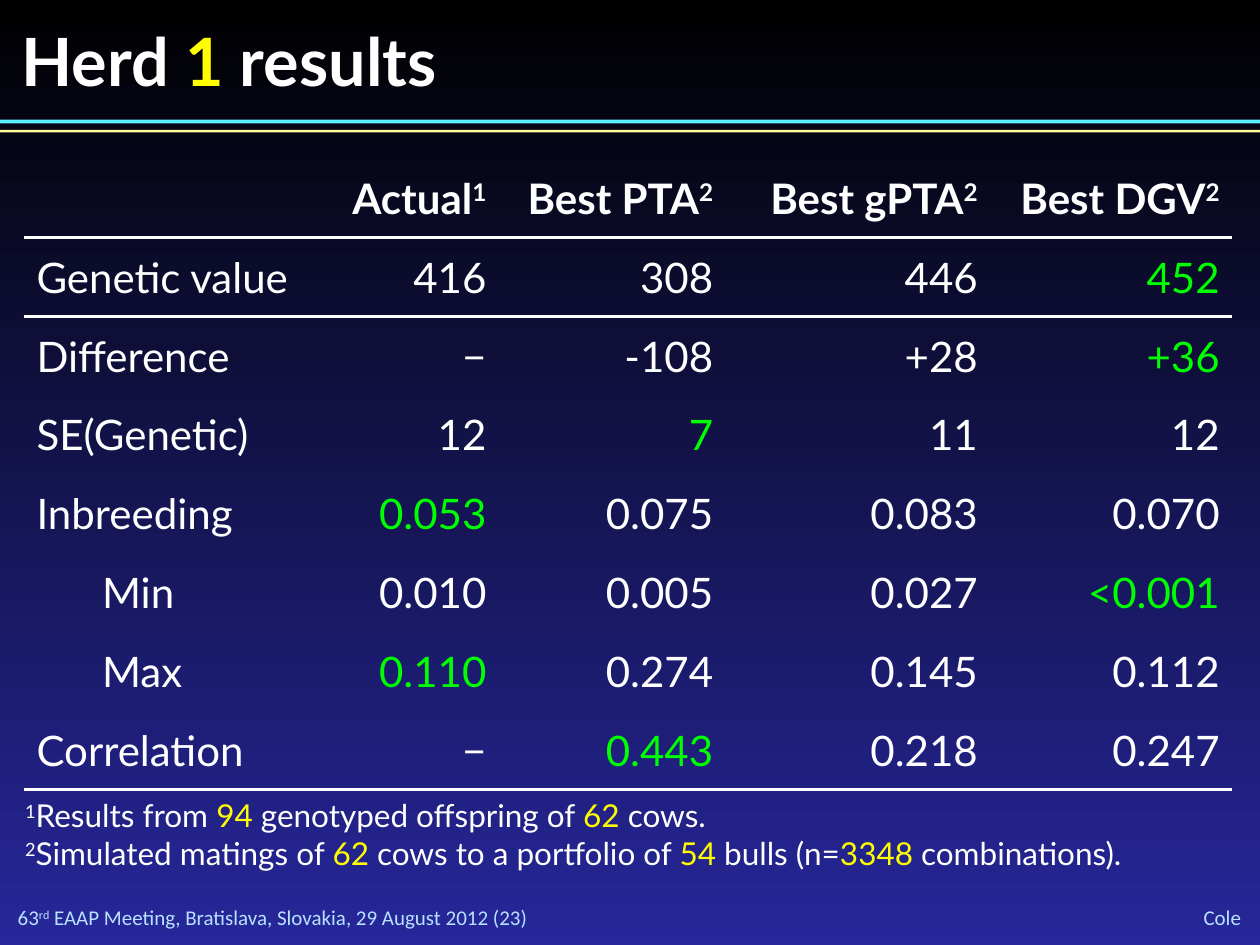
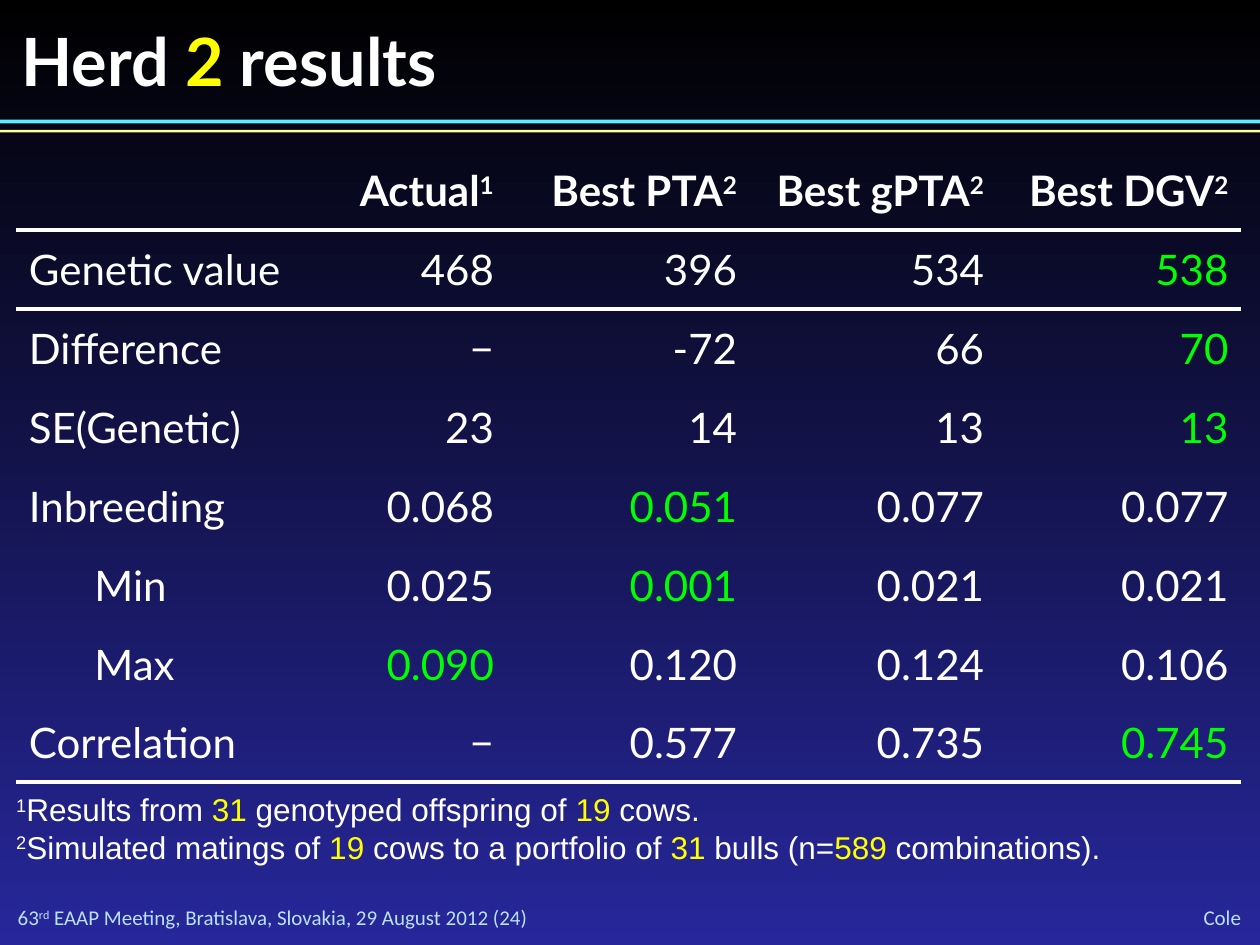
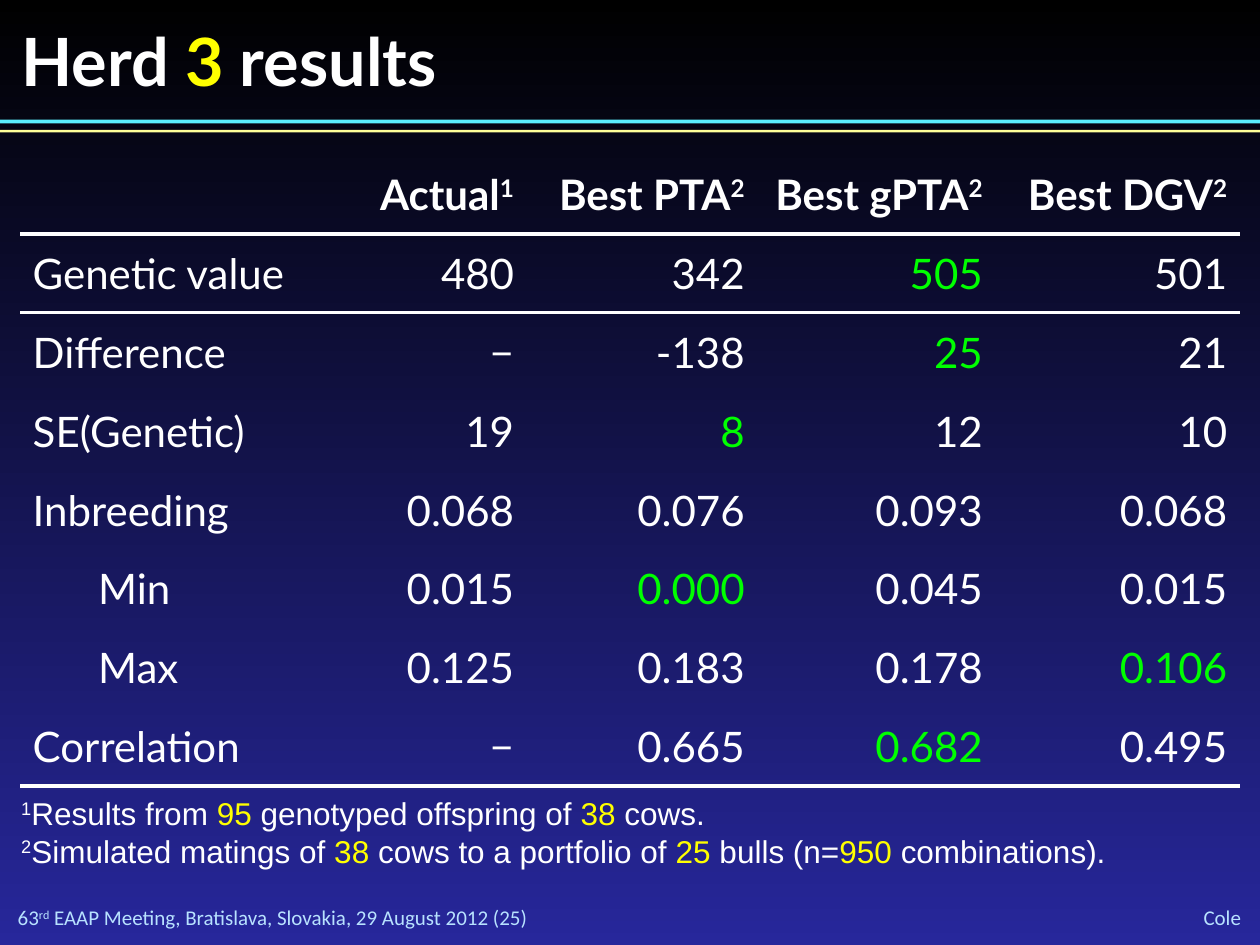
from dataclasses import dataclass
from typing import NamedTuple, Optional

import pptx
import pptx.dml.color
import pptx.enum.shapes
import pptx.enum.text
import pptx.oxml
import pptx.oxml.ns
import pptx.slide
import pptx.table
import pptx.text.text
import pptx.util
from lxml import etree

RGBColor = pptx.dml.color.RGBColor
Align = pptx.enum.text.PP_ALIGN
Anchor = pptx.enum.text.MSO_ANCHOR
qn = pptx.oxml.ns.qn

BLACK = RGBColor(0x00, 0x00, 0x00)
NAVY = RGBColor(0x27, 0x27, 0x9B)
WHITE = RGBColor(0xFF, 0xFF, 0xFF)
YELLOW = RGBColor(0xFF, 0xFF, 0x00)
GREEN = RGBColor(0x00, 0xFF, 0x00)
CYAN = RGBColor(0x5B, 0xEF, 0xFF)
CREAM = RGBColor(0xFF, 0xFF, 0x99)
PALE_BLUE = RGBColor(0xB8, 0xE2, 0xFF)

EMU_PER_PX = 9144  # 100 px to the inch
RULE_WIDTH = pptx.util.Pt(2.25)
PLAIN_TABLE_STYLE = "{2D5ABB26-0587-4C30-8999-92F81FD0307C}"
TABLE_HEIGHT = 501
SUB_ROW_MARGIN = 62
FIRST_PAGE_NUMBER = 23

ROW_LABELS = ("Genetic value", "Difference", "SE(Genetic)", "Inbreeding",
              "Min", "Max", "Correlation")
SUB_ROWS = ("Min", "Max")
HEADERS = (("Actual", "1"), ("Best PTA", "2"), ("Best gPTA", "2"), ("Best DGV", "2"))


class Area(NamedTuple):
    left: int
    top: int
    width: int
    height: int


class Span(NamedTuple):
    text: str
    color: RGBColor = WHITE
    raised: bool = False


class Style(NamedTuple):
    font: str
    size: int
    bold: bool = False
    align: Align = Align.LEFT


class Band(NamedTuple):
    area: Area
    color: RGBColor


class Result(NamedTuple):
    values: tuple[str, ...]
    best: Optional[int]  # column of the highlighted value


@dataclass
class Herd:
    number: int
    offspring: int
    cows: int
    bulls: int
    table_left: int
    table_top: int
    columns: tuple[int, ...]
    note_area: Area
    note_font: str
    results: tuple[Result, ...]


TITLE_AREA = Area(17, 16, 900, 64)
MEETING_AREA = Area(14, 718, 522, 20)
AUTHOR_AREA = Area(872, 717, 113, 21)
BANDS = (Band(Area(0, 95, 1000, 3), CYAN), Band(Area(0, 103, 1000, 2), CREAM))

TITLE_STYLE = Style("Lato", 38, bold=True)
HEADER_STYLE = Style("Lato", 24, bold=True, align=Align.RIGHT)
LABEL_STYLE = Style("Lato", 24)
VALUE_STYLE = Style("Lato", 24, align=Align.RIGHT)
MEETING_STYLE = Style("Calibri", 12)
AUTHOR_STYLE = Style("Calibri", 12, align=Align.RIGHT)

HERDS = (
    Herd(1, 94, 62, 54, 19, 126, (238, 139, 180, 210, 192),
         Area(10, 627, 981, 71), "Lato", (
             Result(("416", "308", "446", "452"), 3),
             Result(("−", "-108", "+28", "+36"), 3),
             Result(("12", "7", "11", "12"), 1),
             Result(("0.053", "0.075", "0.083", "0.070"), 0),
             Result(("0.010", "0.005", "0.027", "<0.001"), 3),
             Result(("0.110", "0.274", "0.145", "0.112"), 0),
             Result(("−", "0.443", "0.218", "0.247"), 1))),
    Herd(2, 31, 19, 31, 13, 120, (247, 142, 193, 196, 194),
         Area(3, 622, 991, 71), "Arial", (
             Result(("468", "396", "534", "538"), 3),
             Result(("−", "-72", "66", "70"), 3),
             Result(("23", "14", "13", "13"), 3),
             Result(("0.068", "0.051", "0.077", "0.077"), 1),
             Result(("0.025", "0.001", "0.021", "0.021"), 1),
             Result(("0.090", "0.120", "0.124", "0.106"), 0),
             Result(("−", "0.577", "0.735", "0.745"), 3))),
    Herd(3, 95, 38, 25, 16, 123, (232, 170, 183, 189, 194),
         Area(7, 625, 966, 71), "Arial", (
             Result(("480", "342", "505", "501"), 2),
             Result(("−", "-138", "25", "21"), 2),
             Result(("19", "8", "12", "10"), 1),
             Result(("0.068", "0.076", "0.093", "0.068"), None),
             Result(("0.015", "0.000", "0.045", "0.015"), 1),
             Result(("0.125", "0.183", "0.178", "0.106"), 3),
             Result(("−", "0.665", "0.682", "0.495"), 2))),
)


def px(length: int) -> pptx.util.Emu:
    return pptx.util.Emu(length * EMU_PER_PX)


def scaled(area: Area) -> list[pptx.util.Emu]:
    return [px(length) for length in area]


def write_spans(para: pptx.text.text._Paragraph, style: Style, spans: list[Span]) -> None:
    para.alignment = style.align
    para.font.name = style.font
    para.font.size = pptx.util.Pt(style.size)
    para.font.bold = style.bold
    for item in spans:
        span = para.add_run()
        span.text = item.text
        span.font.color.rgb = item.color
        if item.raised:
            span._r.get_or_add_rPr().set("baseline", "30000")


def format_frame(frame: pptx.text.text.TextFrame, anchor: Anchor, inset: bool) -> None:
    frame.word_wrap = True
    frame.auto_size = pptx.enum.text.MSO_AUTO_SIZE.SHAPE_TO_FIT_TEXT
    frame.vertical_anchor = anchor
    if not inset:
        frame.margin_left = frame.margin_right = 0
        frame.margin_top = frame.margin_bottom = 0


def add_text(page: pptx.slide.Slide, area: Area, style: Style, lines: list[list[Span]],
             anchor: Anchor = Anchor.MIDDLE, inset: bool = False) -> None:
    frame = page.shapes.add_textbox(*scaled(area)).text_frame
    format_frame(frame, anchor, inset)
    for index, spans in enumerate(lines):
        para = frame.add_paragraph() if index else frame.paragraphs[0]
        write_spans(para, style, spans)


def add_title(page: pptx.slide.Slide, number: int) -> None:
    title = page.shapes.title
    title.left, title.top, title.width, title.height = scaled(TITLE_AREA)
    format_frame(title.text_frame, Anchor.TOP, inset=False)
    write_spans(title.text_frame.paragraphs[0], TITLE_STYLE,
                [Span("Herd "), Span(str(number), YELLOW), Span(" results")])


def add_band(page: pptx.slide.Slide, band: Band) -> None:
    box = page.shapes.add_shape(pptx.enum.shapes.MSO_SHAPE.RECTANGLE, *scaled(band.area))
    box.shadow.inherit = False
    box.fill.solid()
    box.fill.fore_color.rgb = band.color
    box.line.fill.background()


def add_frame(page: pptx.slide.Slide, page_number: int) -> None:
    """Draw the bands and footers that every slide carries."""
    for band in BANDS:
        add_band(page, band)
    add_text(page, MEETING_AREA, MEETING_STYLE, [[
        Span("63", PALE_BLUE), Span("rd", PALE_BLUE, raised=True),
        Span(f" EAAP Meeting, Bratislava, Slovakia, 29 August 2012 ({page_number})", PALE_BLUE)]])
    add_text(page, AUTHOR_AREA, AUTHOR_STYLE, [[Span("Cole", PALE_BLUE)]])


def add_rule(cell: pptx.table._Cell, side: str) -> None:
    """Draw a white border on one side of a cell: "T" or "B"."""
    border = etree.Element(qn(f"a:ln{side}"), w=str(RULE_WIDTH))
    fill = etree.SubElement(border, qn("a:solidFill"))
    etree.SubElement(fill, qn("a:srgbClr"), val=str(WHITE))
    cell._tc.get_or_add_tcPr().insert(0, border)


def fill_row(table: pptx.table.Table, row: int, label: str, style: Style,
             entries: list[list[Span]]) -> None:
    label_cell = table.cell(row, 0)
    write_spans(label_cell.text_frame.paragraphs[0], LABEL_STYLE,
                [Span(label)] if label else [])
    if label in SUB_ROWS:
        label_cell.margin_left = px(SUB_ROW_MARGIN)
    for column, spans in enumerate(entries, start=1):
        write_spans(table.cell(row, column).text_frame.paragraphs[0], style, spans)


def add_results_table(page: pptx.slide.Slide, herd: Herd) -> None:
    last_row = len(ROW_LABELS)
    area = Area(herd.table_left, herd.table_top, sum(herd.columns), TABLE_HEIGHT)
    table = page.shapes.add_table(last_row + 1, len(herd.columns), *scaled(area)).table
    table.first_row = table.horz_banding = False
    table._tbl.tblPr.find(qn("a:tableStyleId")).text = PLAIN_TABLE_STYLE
    for column, width in zip(table.columns, herd.columns):
        column.width = px(width)

    fill_row(table, 0, "", HEADER_STYLE,
             [[Span(name), Span(mark, raised=True)] for name, mark in HEADERS])
    for row, (label, result) in enumerate(zip(ROW_LABELS, herd.results), start=1):
        fill_row(table, row, label, VALUE_STYLE,
                 [[Span(value, GREEN if column == result.best else WHITE)]
                  for column, value in enumerate(result.values)])

    ruled_sides = {0: "B", 1: "T", last_row: "B"}
    for row in range(last_row + 1):
        for column in range(len(herd.columns)):
            cell = table.cell(row, column)
            cell.vertical_anchor = Anchor.MIDDLE
            cell.fill.background()
            if row in ruled_sides:
                add_rule(cell, ruled_sides[row])


def add_notes_below(page: pptx.slide.Slide, herd: Herd) -> None:
    """Write the two footnotes under the table."""
    cows = Span(f"{herd.cows} ", YELLOW)
    lines = [
        [Span("1", raised=True), Span("Results from "), Span(f"{herd.offspring} ", YELLOW),
         Span("genotyped offspring of "), cows, Span("cows.")],
        [Span("2", raised=True), Span("Simulated matings of "), cows,
         Span("cows to a portfolio of "), Span(f"{herd.bulls} ", YELLOW), Span("bulls (n="),
         Span(f"{herd.cows * herd.bulls} ", YELLOW), Span("combinations).")],
    ]
    add_text(page, herd.note_area, Style(herd.note_font, 18), lines, Anchor.TOP, inset=True)


def set_background(master: pptx.slide.SlideMaster) -> None:
    fill = master.background.fill
    fill.gradient()
    fill.gradient_angle = 270
    for stop, color in zip(fill.gradient_stops, (BLACK, NAVY)):
        stop.color.rgb = color


def main() -> None:
    deck = pptx.Presentation()
    deck.slide_width, deck.slide_height = px(1000), px(750)
    set_background(deck.slide_master)
    title_only = deck.slide_layouts.get_by_name("Title Only")
    for page_number, herd in enumerate(HERDS, start=FIRST_PAGE_NUMBER):
        page = deck.slides.add_slide(title_only)
        add_frame(page, page_number)
        add_title(page, herd.number)
        add_results_table(page, herd)
        add_notes_below(page, herd)
    deck.save("out.pptx")


if __name__ == "__main__":
    main()
